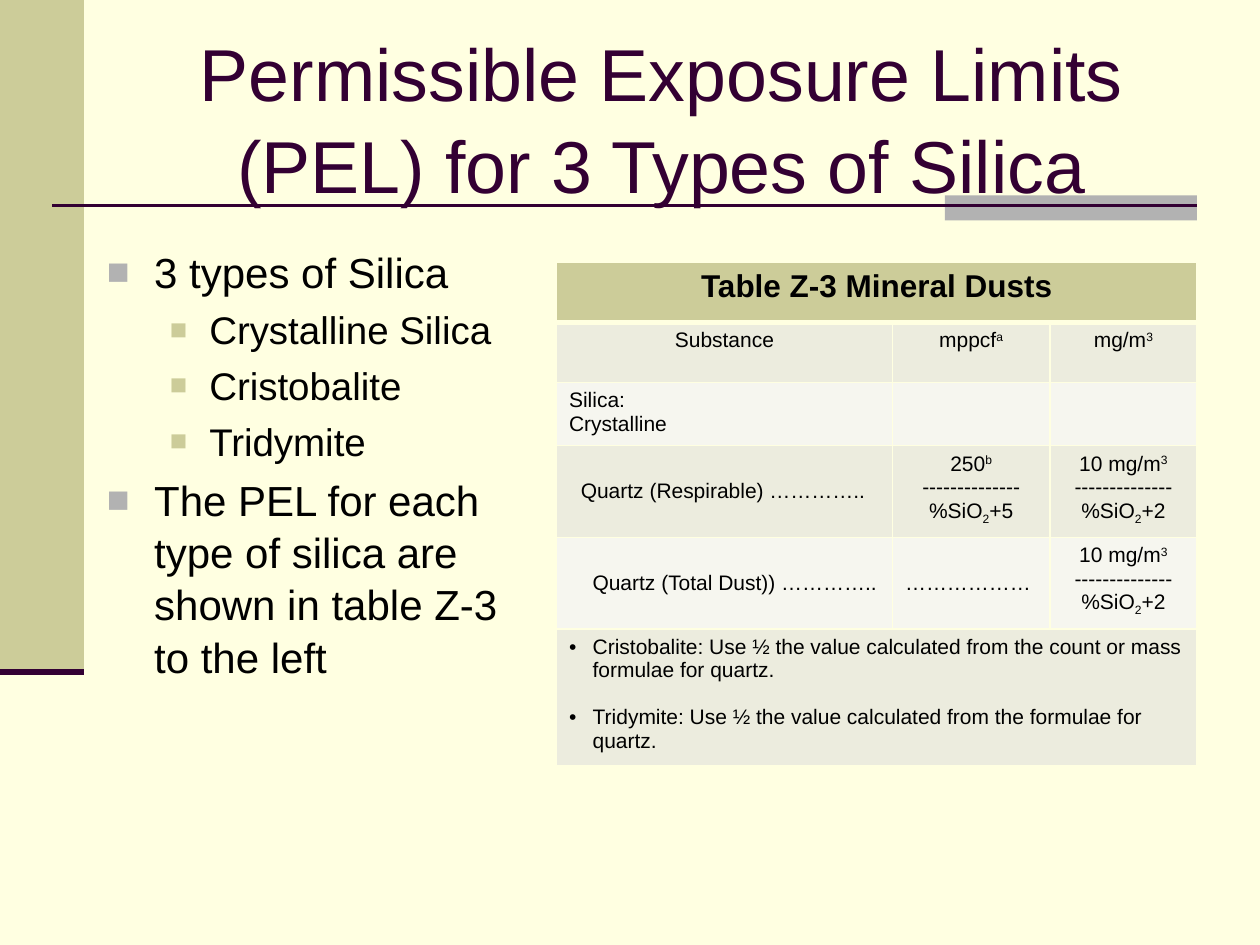
"""Builds a slide on permissible exposure limits for three types of silica."""
from lxml import etree
from pptx import Presentation
from pptx import util as u
from pptx.dml.color import RGBColor
from pptx.enum import shapes, text
from pptx.oxml import ns

COLORS = {"page": "FFFFE1", "olive": "CCCC99", "gray": "B2B2B2", "plum": "330033",
          "ink": "000000", "band": "ECECDE", "pale": "F6F6EF"}
CENTER, LEFT = text.PP_ALIGN.CENTER, text.PP_ALIGN.LEFT
MIDDLE, TOP = text.MSO_ANCHOR.MIDDLE, text.MSO_ANCHOR.TOP
DASHES = "--------------"
TYPES = [("3 types of Silica", 0), ("Crystalline Silica", 1), ("Cristobalite", 1),
         ("Tridymite", 1),
         ("The PEL for each type of silica are shown in table Z-3 to the left", 0)]
LEVELS = [{"size": 24, "left": 27, "hang": 27, "color": "gray", "scale": 90},
          {"size": 22, "left": 58.5, "hang": 22.5, "color": "olive", "scale": 75}]
NOTES = ["Cristobalite: Use ½ the value calculated from the count or mass formulae for quartz.",
         "Tridymite: Use ½ the value calculated from the formulae for quartz."]
COLUMNS = [192, 90, 84]
ROWS = [34.3, 34.3, 34.3, 49.3, 49.3, 73.8]


def color(name):
    """Return the named colour."""
    return RGBColor.from_string(COLORS[name])


def add_child(parent, tag, **attributes):
    """Append a DrawingML element with the given attributes."""
    values = {key: str(value) for key, value in attributes.items()}
    return etree.SubElement(parent, ns.qn(tag), values)


def add_block(page, left, top, width, height, fill):
    """Add a plain filled rectangle."""
    block = page.shapes.add_shape(shapes.MSO_SHAPE.RECTANGLE, u.Pt(left), u.Pt(top),
                                  u.Pt(width), u.Pt(height))
    block.shadow.inherit = False
    block.fill.solid()
    block.fill.fore_color.rgb = color(fill)
    block.line.fill.background()


def add_rule(page, left, right, top, weight):
    """Add a horizontal line."""
    rule = page.shapes.add_connector(shapes.MSO_CONNECTOR.STRAIGHT, u.Pt(left), u.Pt(top),
                                     u.Pt(right), u.Pt(top))
    rule.line.color.rgb = color("plum")
    rule.line.width = u.Pt(weight)
    add_child(rule._element.spPr, "a:effectLst")


def add_box(page, left, top, width, height, anchor):
    """Add a wrapping text box and return its text frame."""
    box = page.shapes.add_textbox(u.Pt(left), u.Pt(top), u.Pt(width), u.Pt(height))
    box.text_frame.word_wrap = True
    box.text_frame.vertical_anchor = anchor
    return box.text_frame


def style_runs(para, size, fill="ink", bold=False):
    """Format every run of a paragraph."""
    for span in para.runs:
        span.font.name = "Arial"
        span.font.size = u.Pt(size)
        span.font.bold = bold
        span.font.color.rgb = color(fill)


def set_bullet(para, mark, left, hang, fill="ink", scale=100):
    """Give a paragraph a hanging bullet."""
    props = para._p.get_or_add_pPr()
    props.set("marL", str(u.Pt(left)))
    props.set("indent", str(-u.Pt(hang)))
    add_child(add_child(props, "a:buClr"), "a:srgbClr", val=COLORS[fill])
    add_child(props, "a:buSzPct", val=scale * 1000)
    add_child(props, "a:buFont", typeface="Arial")
    add_child(props, "a:buChar", char=mark)


def paragraphs(frame, count):
    """Return the given number of paragraphs of a text frame."""
    return [frame.paragraphs[0]] + [frame.add_paragraph() for _ in range(count - 1)]


def add_title(page):
    """Add the slide title."""
    para = add_box(page, 72, 21.6, 612, 90, MIDDLE).paragraphs[0]
    para.text = "Permissible Exposure Limits (PEL) for 3 Types of Silica"
    para.alignment = CENTER
    para.line_spacing = 1.04
    style_runs(para, 42, "plum")


def add_types(page):
    """Add the bulleted list of silica types."""
    frame = add_box(page, 54, 136, 240, 356, TOP)
    for index, (para, (words, depth)) in enumerate(zip(paragraphs(frame, len(TYPES)), TYPES)):
        level = LEVELS[depth]
        para.text = words
        para.level = depth
        para.line_spacing = 1.04
        if index:
            para.space_before = u.Pt(level["size"] * 0.2)
        set_bullet(para, "■", level["left"], level["hang"], level["color"], level["scale"])
        style_runs(para, level["size"])


def set_borders(cell, row):
    """Draw the cell borders, heavier under the heading row."""
    props = cell._tc.get_or_add_tcPr()
    heavy = {0: "a:lnB", 1: "a:lnT"}.get(row)
    for side in ("a:lnL", "a:lnR", "a:lnT", "a:lnB"):
        line = add_child(props, side, w=u.Pt(3 if side == heavy else 1))
        add_child(add_child(line, "a:solidFill"), "a:srgbClr", val=COLORS["page"])


def fill_cell(cell, lines, size=12, align=CENTER, anchor=TOP, indent=0, bold=False):
    """Write lines of (words, baseline percent) pairs into a cell."""
    cell.vertical_anchor = anchor
    for para, pieces in zip(paragraphs(cell.text_frame, len(lines)), lines):
        para.alignment = align
        if indent:
            para._p.get_or_add_pPr().set("marL", str(u.Pt(indent)))
        for words, baseline in pieces:
            span = para.add_run()
            span.text = words
            if baseline:
                span._r.get_or_add_rPr().set("baseline", str(baseline * 1000))
        style_runs(para, size, bold=bold)


def plain(*lines):
    """Return lines without raised or lowered parts."""
    return [[(words, 0)] for words in lines]


def fraction(amount, mark, percent):
    """Return the lines of a limit over its silica percentage."""
    return [[(amount, 0), (mark, 30)], [(DASHES, 0)],
            [("%SiO", 0), ("2", -25), (percent, 0)]]


def add_notes(cell):
    """Write the bulleted notes below the limits."""
    fill_cell(cell, plain(*NOTES), align=LEFT)
    for index, para in enumerate(cell.text_frame.paragraphs):
        if index:
            para.space_before = u.Pt(13.4)
        set_bullet(para, "•", 13.5, 13.5)


def add_limits(page):
    """Add the table of mineral dust limits."""
    frame = page.shapes.add_table(len(ROWS), len(COLUMNS), u.Pt(318), u.Pt(150),
                                  u.Pt(sum(COLUMNS)), u.Pt(sum(ROWS)))
    table = frame.table
    for column, width in zip(table.columns, COLUMNS):
        column.width = u.Pt(width)
    for index, (row, height) in enumerate(zip(table.rows, ROWS)):
        row.height = u.Pt(height)
        for cell in row.cells:
            set_borders(cell, index)
            cell.fill.solid()
            cell.fill.fore_color.rgb = color(("band" if index % 2 else "pale") if index else "olive")
    for index in (0, len(ROWS) - 1):
        table.cell(index, 0).merge(table.cell(index, len(COLUMNS) - 1))
    fill_cell(table.cell(0, 0), plain("Table Z-3 Mineral Dusts"), size=18, bold=True)
    fill_cell(table.cell(1, 0), plain("Substance"))
    fill_cell(table.cell(1, 1), [[("mppcf", 0), ("a", 30)]])
    fill_cell(table.cell(1, 2), [[("mg/m", 0), ("3", 30)]])
    fill_cell(table.cell(2, 0), plain("Silica:", "Crystalline"), align=LEFT)
    fill_cell(table.cell(3, 0), plain("Quartz (Respirable) ………….."), align=LEFT,
              anchor=MIDDLE, indent=6.7)
    fill_cell(table.cell(3, 1), fraction("250", "b", "+5"))
    fill_cell(table.cell(4, 0), plain("Quartz (Total Dust)) ………….."), align=LEFT,
              anchor=MIDDLE, indent=13.4)
    fill_cell(table.cell(4, 1), plain("………………"), align=LEFT, anchor=MIDDLE)
    for index in (3, 4):
        fill_cell(table.cell(index, 2), fraction("10 mg/m", "3", "+2"))
    add_notes(table.cell(5, 0))


def main():
    """Build and save the slide."""
    deck = Presentation()
    deck.slide_width, deck.slide_height = u.Pt(720), u.Pt(540)
    page = deck.slides.add_slide(deck.slide_layouts[6])
    page.background.fill.solid()
    page.background.fill.fore_color.rgb = color("page")
    add_block(page, 0, 0, 48, 384, "olive")
    add_block(page, 540, 111.6, 144, 14.4, "gray")
    add_rule(page, 30, 684, 117.6, 1.5)
    add_rule(page, 0, 48, 384, 3.5)
    add_title(page)
    add_types(page)
    add_limits(page)
    deck.save("out.pptx")


if __name__ == "__main__":
    main()
